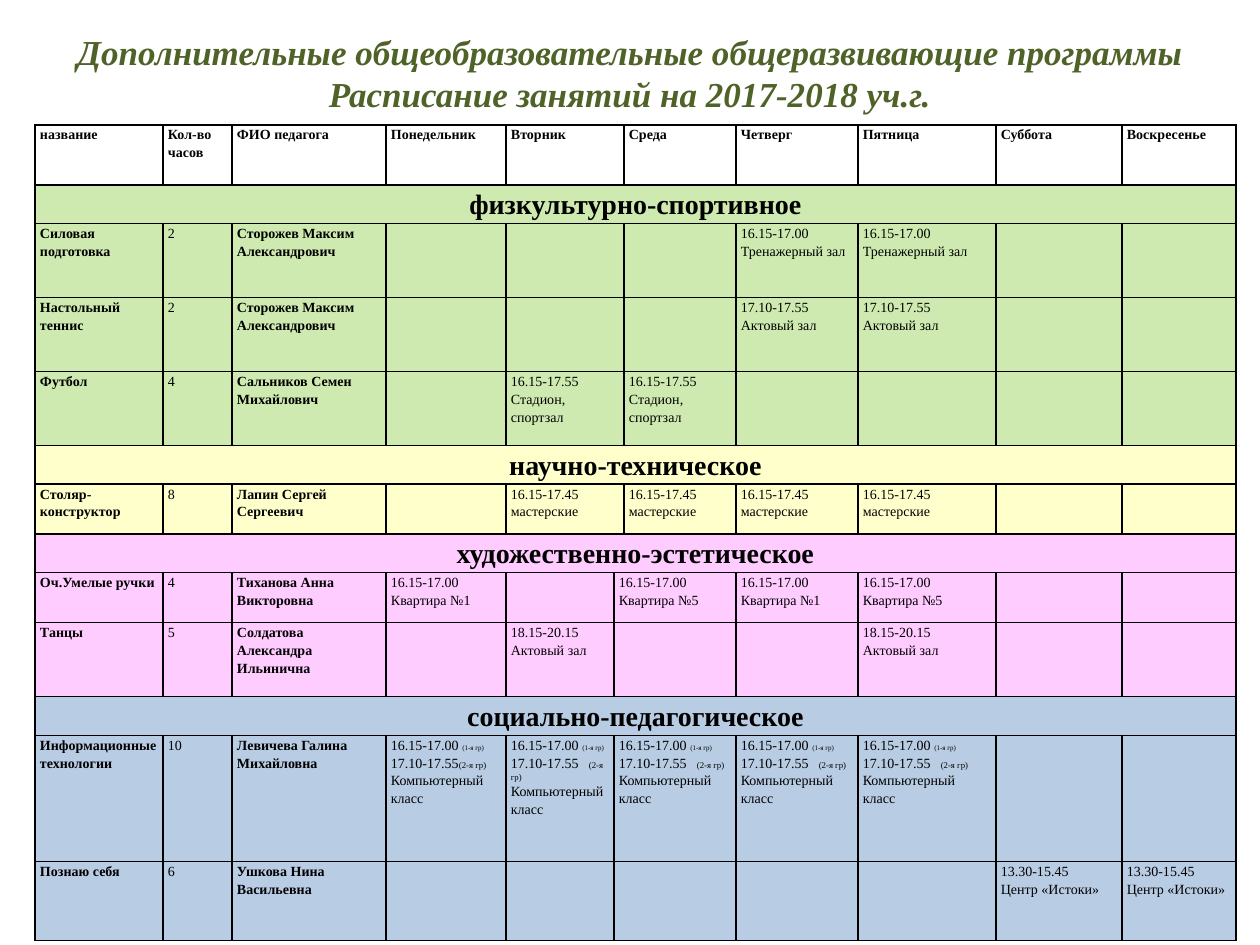
import pptx
import pptx.util
import pptx.dml.color
import pptx.enum.text
import pptx.oxml
import pptx.oxml.ns
import lxml.etree

PX = 914400 / 126
FONT = "Times New Roman"
HUES = {"ink": "000000", "title": "4F6228", "head": "FFFFFF", "sport": "CEEAB0",
        "tech": "FFFFCC", "art": "FFCCFF", "social": "B8CCE4"}
LEFT, MID = pptx.enum.text.PP_ALIGN.LEFT, pptx.enum.text.PP_ALIGN.CENTER


def px(n):
    return pptx.util.Emu(round(n * PX))


def write(frame, lines, size=8, bold=False, italic=False, hue="ink", align=LEFT, space=1.15, tab=None):
    """Fill a frame; a line is a string or a list of (text, size) pairs."""
    frame.word_wrap = True
    for i, line in enumerate(lines):
        para = frame.paragraphs[0] if i == 0 else frame.add_paragraph()
        para.alignment, para.line_spacing = align, space
        parts = [(line, size)] if isinstance(line, str) else line
        if tab and any("\t" in text for text, _ in parts):
            props = para._p.get_or_add_pPr()
            stops = lxml.etree.SubElement(props, pptx.oxml.ns.qn("a:tabLst"))
            lxml.etree.SubElement(stops, pptx.oxml.ns.qn("a:tab"), pos=str(px(tab)), algn="l")
        for text, points in parts:
            run = para.add_run()
            run.text = text
            font = run.font
            font.name, font.size = FONT, pptx.util.Pt(points)
            font.bold, font.italic = bold, italic
            font.color.rgb = pptx.dml.color.RGBColor.from_string(HUES[hue])


deck = pptx.Presentation()
deck.slide_width, deck.slide_height = px(1260), px(945)
slide = deck.slides.add_slide(deck.slide_layouts[6])

# Title
box = slide.shapes.add_textbox(px(63), px(30), px(1134), px(84))
box.text_frame.vertical_anchor = pptx.enum.text.MSO_ANCHOR.MIDDLE
box.text_frame.margin_top = box.text_frame.margin_bottom = 0
write(box.text_frame, ["Дополнительные общеобразовательные общеразвивающие программы",
                       "Расписание занятий на 2017-2018 уч.г."],
      size=20, bold=True, italic=True, hue="title", align=MID, space=1.0)

# Timetable: days are counted from Monday = 0
heads = ["название", "Кол-во часов", "ФИО педагога", "Понедельник", "Вторник", "Среда",
         "Четверг", "Пятница", "Суббота", "Воскресенье"]
gym = ["16.15-17.00", "Тренажерный зал"]
hall = ["17.10-17.55", "Актовый зал"]
field = ["16.15-17.55", "Стадион, спортзал"]
shop = ["16.15-17.45", "мастерские"]
flat1 = ["16.15-17.00", "Квартира №1"]
flat5 = ["16.15-17.00", "Квартира №5"]
dance = ["18.15-20.15", "Актовый зал"]
first = [("16.15-17.00 ", 8), ("(1-я гр)", 4)]
room = "Компьютерный класс"
class1 = [first, [("17.10-17.55", 8), ("(2-я гр)", 5)], room]
class2 = [first, [("17.10-17.55\t", 8), ("(2-я гр)", 5)], room]
center = ["13.30-15.45", "Центр «Истоки»"]

# Each group: heading, hue, column joined with the next one, lessons
groups = [
    ("физкультурно-спортивное", "sport", 4, [
        (74, "Силовая подготовка", "2", "Сторожев Максим Александрович", {3: gym, 4: gym}),
        (74, "Настольный теннис", "2", "Сторожев Максим Александрович", {3: hall, 4: hall}),
        (74, "Футбол", "4", "Сальников Семен Михайлович", {1: field, 2: field})]),
    ("научно-техническое", "tech", 4, [
        (50, "Столяр-конструктор", "8", "Лапин Сергей Сергеевич",
         {1: shop, 2: shop, 3: shop, 4: shop})]),
    ("художественно-эстетическое", "art", 5, [
        (50, "Оч.Умелые ручки", "4", "Тиханова Анна Викторовна",
         {0: flat1, 2: flat5, 3: flat1, 4: flat5}),
        (74, "Танцы", "5", "Солдатова Александра Ильинична", {1: dance, 4: dance})]),
    ("социально-педагогическое", "social", 5, [
        (126, "Информационные технологии", "10", "Левичева Галина Михайловна",
         {0: class1, 1: class2, 2: class2, 3: class2, 4: class2}),
        (79, "Познаю себя", "6", "Ушкова Нина Васильевна", {5: center, 6: center})]),
]

# Rows as (height, hue, joined column or None for a heading, cell texts)
rows = [(60, "head", 4, [[head] for head in heads])]
for name, hue, join, lessons in groups:
    rows.append((36, hue, None, [[name]]))
    for high, title, hours, who, days in lessons:
        rows.append((high, hue, join, [[title], [hours], [who]] + [days.get(d, []) for d in range(7)]))

wides = [128, 69, 154, 120, 108, 10, 112, 122, 138, 126, 114]
grid = slide.shapes.add_table(len(rows), len(wides), px(35), px(125), px(sum(wides)),
                              px(sum(row[0] for row in rows))).table
grid.first_row = grid.horz_banding = False
for col, wide in zip(grid.columns, wides):
    col.width = px(wide)

for r, (high, hue, join, texts) in enumerate(rows):
    grid.rows[r].height = px(high)
    # Fill, margins and borders
    for c in range(len(wides)):
        cell = grid.cell(r, c)
        cell.margin_left = cell.margin_right = px(5)
        cell.margin_top = cell.margin_bottom = 0
        props = cell._tc.get_or_add_tcPr()
        for side in ("lnL", "lnR", "lnT", "lnB"):
            edge = lxml.etree.SubElement(props, pptx.oxml.ns.qn("a:" + side), w="12700")
            paint = lxml.etree.SubElement(edge, pptx.oxml.ns.qn("a:solidFill"))
            lxml.etree.SubElement(paint, pptx.oxml.ns.qn("a:srgbClr"), val=HUES["ink"])
        cell.fill.solid()
        cell.fill.fore_color.rgb = pptx.dml.color.RGBColor.from_string(HUES[hue])
    # Joined cells and text
    if join is None:
        grid.cell(r, 0).merge(grid.cell(r, len(wides) - 1))
        write(grid.cell(r, 0).text_frame, texts[0], size=16, bold=True, align=MID)
        continue
    grid.cell(r, join).merge(grid.cell(r, join + 1))
    for i, lines in enumerate(texts):
        cell = grid.cell(r, i if i <= join else i + 1)
        write(cell.text_frame, lines, bold=r == 0 or i in (0, 2), tab=78)

deck.save("out.pptx")
